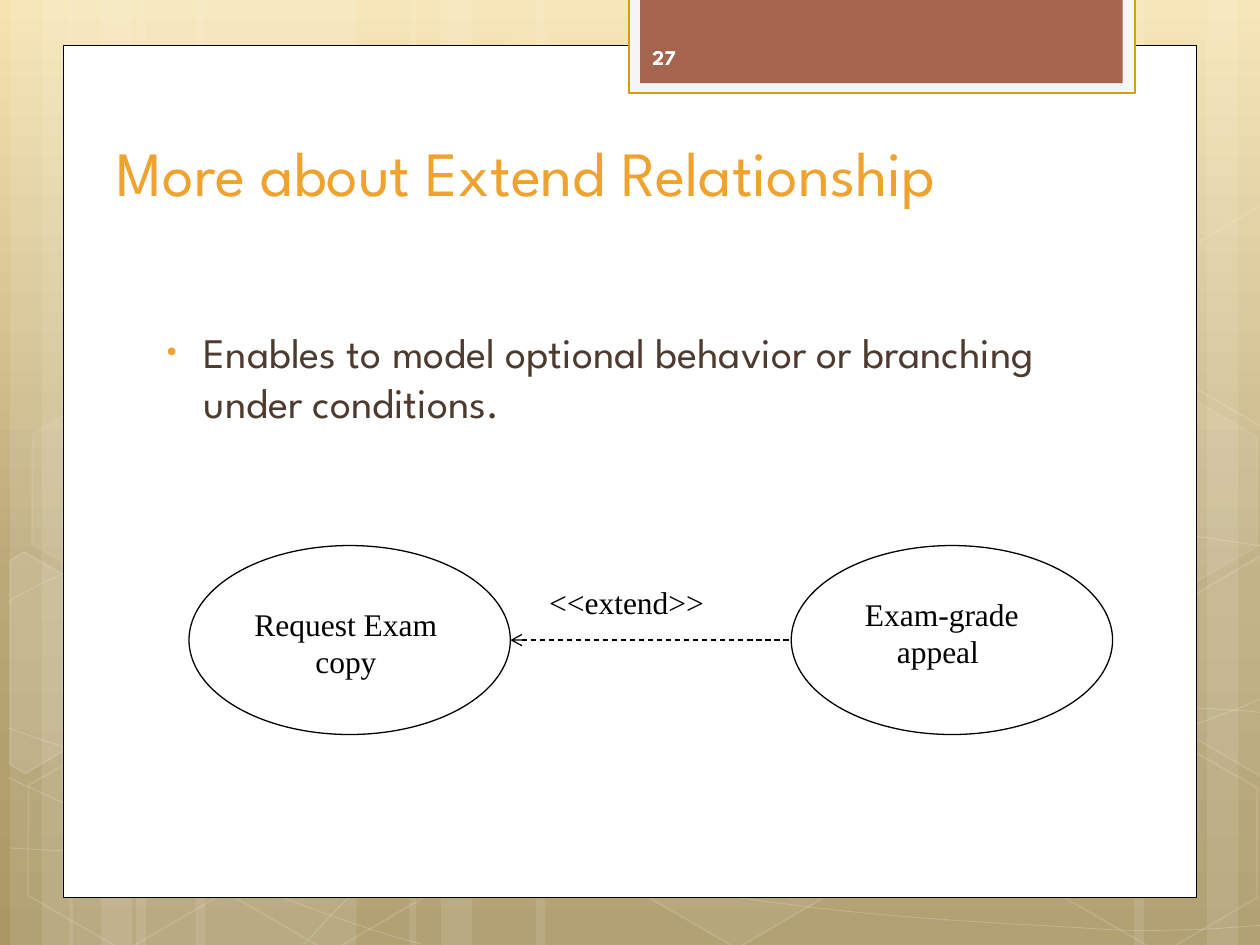
from copy import deepcopy
from dataclasses import dataclass

from lxml import etree
from pptx import Presentation
from pptx.dml.color import RGBColor
from pptx.enum import dml, shapes, text
from pptx.oxml import ns
from pptx.util import Inches, Pt


@dataclass(frozen=True)
class Theme:
    sky: tuple = ((0, "F6E4B0"), (0.62, "BAA878"), (1, "A99764"))
    white: str = "FFFFFF"
    frame: str = "F5F5F5"
    gold: str = "D2A010"
    clay: str = "A5644E"
    orange: str = "F0A22E"
    brown: str = "4E3B30"
    number: str = "FEFEFE"
    black: str = "000000"
    heading_font: str = "League Spartan"
    diagram_font: str = "Times New Roman"
    title_size: int = 36
    body_size: int = 24
    diagram_size: int = 18
    number_size: int = 12


theme = Theme()


def paint(shape, fill=None, fill_alpha=100, line=None, width=1, line_alpha=100):
    """Set fill and outline, with opacity in percent."""
    shape.shadow.inherit = False
    for paint_fill, color, alpha in ((shape.fill, fill, fill_alpha),
                                     (shape.line.fill, line, line_alpha)):
        if color is None:
            paint_fill.background()
            continue
        paint_fill.solid()
        paint_fill.fore_color.rgb = RGBColor.from_string(color)
        if alpha < 100:
            parent = shape._element.spPr
            if paint_fill is not shape.fill:
                parent = parent.find(ns.qn("a:ln"))
            node = parent.find(ns.qn("a:solidFill")).find(ns.qn("a:srgbClr"))
            etree.SubElement(node, ns.qn("a:alpha")).set("val", str(alpha * 1000))
    if line:
        shape.line.width = Pt(width)


def write(page, area, words, font, size, color, anchor=text.MSO_ANCHOR.TOP,
          align=text.PP_ALIGN.LEFT, wrap=True, bullet=None):
    """Add a text box holding one paragraph."""
    box = page.shapes.add_textbox(*map(Inches, area))
    box.text_frame.word_wrap = wrap
    box.text_frame.vertical_anchor = anchor
    box.text_frame.text = words
    para = box.text_frame.paragraphs[0]
    para.alignment = align
    if bullet:
        props = para._p.get_or_add_pPr()
        props.set("marL", str(Inches(0.38)))
        props.set("indent", str(Inches(-0.3)))
        bullet_color = etree.SubElement(props, ns.qn("a:buClr"))
        etree.SubElement(bullet_color, ns.qn("a:srgbClr")).set("val", theme.orange)
        etree.SubElement(props, ns.qn("a:buSzPct")).set("val", "76000")
        etree.SubElement(props, ns.qn("a:buFont")).set("typeface", theme.diagram_font)
        etree.SubElement(props, ns.qn("a:buChar")).set("char", bullet)
    for span in para.runs:
        span.font.name = font
        span.font.size = Pt(size)
        span.font.color.rgb = RGBColor.from_string(color)
    return box


deck = Presentation()
deck.slide_width, deck.slide_height = Inches(10), Inches(7.5)
page = deck.slides.add_slide(deck.slide_layouts[6])

# Background gradient, light at the top
sky = page.background.fill
sky.gradient()
sky.gradient_angle = 270
stop_list = next(page._element.iter(ns.qn("a:gsLst")))
stop_list.append(deepcopy(stop_list[0]))
for stop, (position, color) in zip(sky.gradient_stops, theme.sky):
    stop.position = position
    stop.color.rgb = RGBColor.from_string(color)

# Translucent vertical bands
bands = [(1.08, 1.75), (0.08, 0.5), (0.33, 0.83), (1.55, 1.75), (0.55, 0.5), (0.8, 0.83),
         (7.33, 1.75), (9.58, 0.5), (9, 0.83), (4.25, 3.08), (3.25, 0.5), (3.5, 0.83)]
for left, width in bands:
    band = page.shapes.add_shape(shapes.MSO_SHAPE.RECTANGLE, Inches(left), 0,
                                 Inches(width), deck.slide_height)
    paint(band, theme.white, 10)

# Thin curves: a start point, then three Bezier points per segment
curves = [
    [(0.07, 6.73), (0.61, 6.76), (1.15, 6.79), (1.9, 6.78), (2.65, 6.77), (3.58, 6.75),
     (4.58, 6.65), (5.58, 6.55), (7, 6.36), (7.92, 6.17), (8.83, 5.98), (9.77, 5.68),
     (10.07, 5.51)],
    [(0.07, 4.77), (0.36, 4.61), (0.65, 4.46), (1.21, 4.31), (1.78, 4.16), (2.59, 3.94),
     (3.47, 3.87), (4.36, 3.8), (5.44, 3.79), (6.54, 3.87), (7.64, 3.95), (9.47, 4.26),
     (10.07, 4.34)],
    [(0.06, 6.17), (1.27, 6.72), (2.47, 7.27), (3.34, 7.49)],
    [(0.07, 5.78), (0.38, 5.89), (0.7, 6), (1.28, 6.16), (1.86, 6.31), (2.73, 6.56),
     (3.57, 6.73), (4.4, 6.9), (5.45, 7.08), (6.28, 7.18), (7.11, 7.29), (8, 7.33),
     (8.53, 7.36), (9.05, 7.4), (9.19, 7.38), (9.45, 7.38), (9.71, 7.37), (9.89, 7.35),
     (10.07, 7.34)],
    [(2.42, 7.49), (2.6, 7.29), (2.78, 7.09), (3.02, 6.91), (3.26, 6.73), (3.6, 6.53),
     (3.88, 6.39), (4.16, 6.25), (4.33, 6.19), (4.7, 6.09), (5.06, 5.99), (5.73, 5.85),
     (6.08, 5.78), (6.44, 5.71), (6.49, 5.71), (6.8, 5.69), (7.11, 5.66), (7.6, 5.63),
     (7.94, 5.62), (8.29, 5.61), (8.86, 5.62), (8.86, 5.62), (9.1, 5.62), (9.3, 5.62),
     (9.53, 5.62), (9.71, 5.63), (9.88, 5.64), (10.06, 5.66)],
]
for knots in curves:
    start, *others = [tuple(map(Inches, knot)) for knot in knots]
    builder = page.shapes.build_freeform(*start)
    builder.add_line_segments(others, close=False)
    curve = builder.convert_to_shape()
    paint(curve, line=theme.white, width=0.5, line_alpha=20)
    # Join each three straight segments into one Bezier segment
    outline = next(curve._element.iter(ns.qn("a:path")))
    segments = outline.findall(ns.qn("a:lnTo"))
    for first in range(0, len(segments), 3):
        bezier = etree.SubElement(outline, ns.qn("a:cubicBezTo"))
        for segment in segments[first:first + 3]:
            bezier.append(segment[0])
            outline.remove(segment)

# Hexagons: left, top, fill opacity, line opacity
hexagons = [(3.34, 0.36, 4, 8), (4.97, 5.89, 6, 12), (0.11, 5.91, 0, 12), (0.14, 3.12, 7, 8),
            (1.74, 5.92, 0, 12), (8.34, 5.93, 0, 12), (8.34, 3.14, 7, 8)]
for left, top, fill_alpha, line_alpha in hexagons:
    hexagon = page.shapes.add_shape(shapes.MSO_SHAPE.HEXAGON, Inches(left), Inches(top),
                                    Inches(1.75), Inches(1.52))
    hexagon.adjustments[0] = 0.285
    hexagon.rotation = 30
    paint(hexagon, theme.white if fill_alpha else None, fill_alpha,
          theme.white, 1, line_alpha)

# Hexagons cut by the slide edges
cut_hexagons = [
    (10, [(0.08, 4.45), (0.19, 4.38), (0.96, 4.82), (0.95, 5.7), (0.2, 6.14), (0.08, 6.07)]),
    (4, [(9.26, 4.85), (10.01, 4.41), (10.09, 4.46), (10.09, 6.13), (10.02, 6.17), (9.26, 5.73)]),
    (0, [(9.26, 2.07), (10.01, 1.63), (10.1, 1.68), (10.09, 3.35), (10.02, 3.39), (9.26, 2.95)]),
]
for fill_alpha, corners in cut_hexagons:
    start, *others = [tuple(map(Inches, corner)) for corner in corners]
    builder = page.shapes.build_freeform(*start)
    builder.add_line_segments(others, close=True)
    paint(builder.convert_to_shape(), theme.white if fill_alpha else None, fill_alpha,
          theme.white, 1, 12)

# White panel and the number tab
panels = [((0.5, 0.36, 9, 6.76), theme.white, theme.black, 0.5),
          ((4.99, -0.02, 4.02, 0.76), theme.frame, theme.gold, 1.25),
          ((5.08, -0.02, 3.83, 0.68), theme.clay, None, 0)]
for area, fill, line, width in panels:
    panel = page.shapes.add_shape(shapes.MSO_SHAPE.RECTANGLE, *map(Inches, area))
    paint(panel, fill, line=line, width=width)

# Title, bullet and slide number
write(page, (0.83, 0.83, 8.19, 0.88), "More about Extend Relationship", theme.heading_font,
      theme.title_size, theme.orange, anchor=text.MSO_ANCHOR.BOTTOM)
write(page, (1.14, 2.54, 7.94, 3.84),
      "Enables to model optional behavior or branching under conditions.",
      theme.heading_font, theme.body_size, theme.brown, bullet="•")
number = write(page, (5.08, 0.25, 1.46, 0.4), "27", theme.heading_font, theme.number_size,
               theme.number, anchor=text.MSO_ANCHOR.MIDDLE)
number.text_frame.paragraphs[0].runs[0].font.bold = True

# Use cases
use_cases = [(1.5, (1.82, 4.75, 1.85, 0.7), "Request Exam copy"),
             (6.28, (6.5, 4.67, 1.95, 0.7), "Exam-grade appeal ")]
for left, label_area, label in use_cases:
    ellipse = page.shapes.add_shape(shapes.MSO_SHAPE.OVAL, Inches(left), Inches(4.33),
                                    Inches(2.55), Inches(1.5))
    paint(ellipse, line=theme.black, width=0.75)
    write(page, label_area, label, theme.diagram_font, theme.diagram_size, theme.black,
          align=text.PP_ALIGN.CENTER)

# Extend arrow
arrow = page.shapes.add_connector(shapes.MSO_CONNECTOR.STRAIGHT, Inches(4.05), Inches(5.08),
                                  Inches(6.28), Inches(5.08))
arrow.line.color.rgb = RGBColor.from_string(theme.black)
arrow.line.width = Pt(0.75)
arrow.line.dash_style = dml.MSO_LINE.DASH
arrow_props = arrow._element.spPr
etree.SubElement(arrow_props.find(ns.qn("a:ln")), ns.qn("a:headEnd")).set("type", "arrow")
etree.SubElement(arrow_props, ns.qn("a:effectLst"))
write(page, (4.26, 4.58, 1.82, 0.4), "<<extend>>", theme.diagram_font, theme.diagram_size,
      theme.black, wrap=False)

deck.save("out.pptx")
